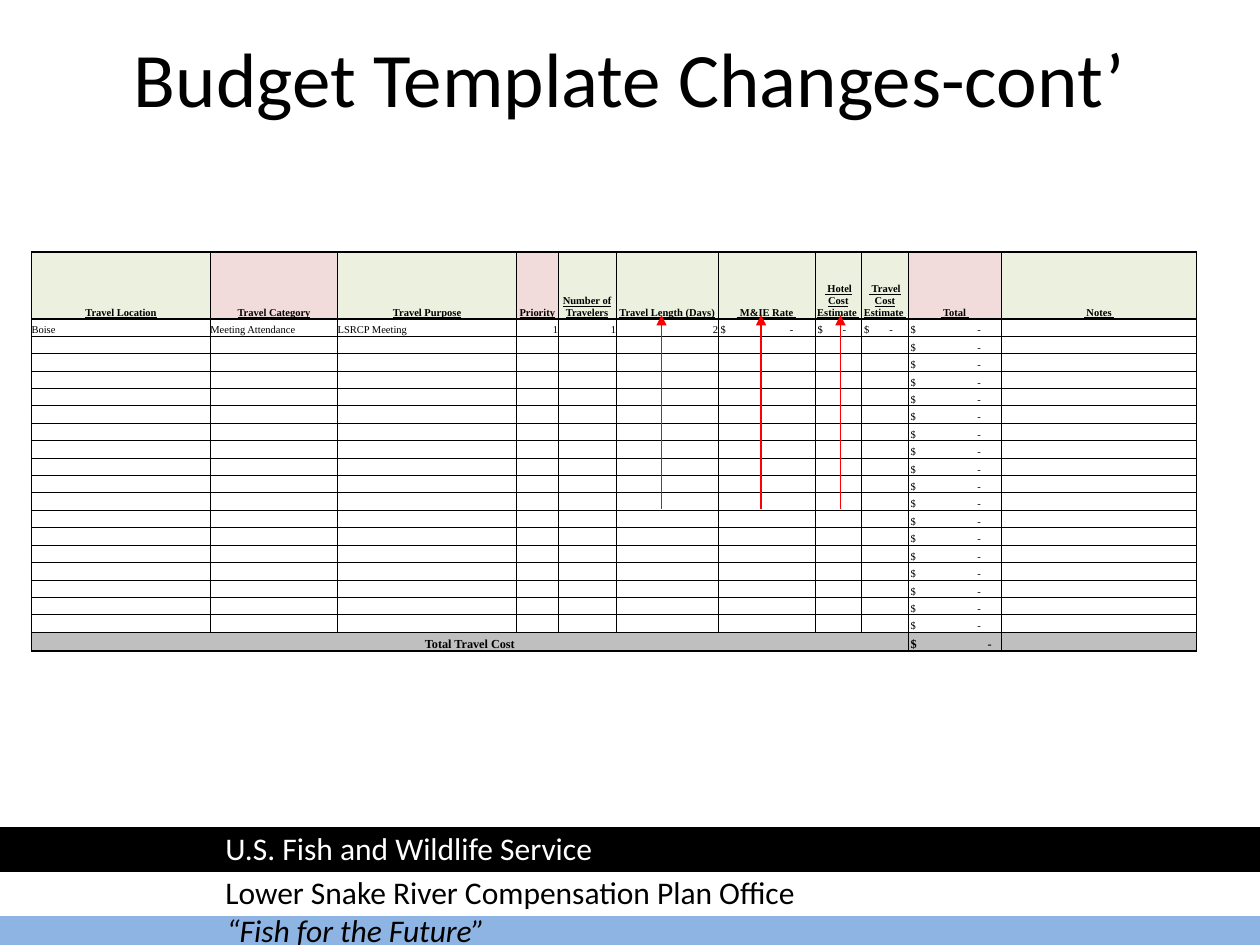
from dataclasses import dataclass

from lxml.etree import SubElement
from pptx import Presentation
from pptx.dml.color import RGBColor
from pptx.enum.shapes import MSO_CONNECTOR, MSO_SHAPE
from pptx.enum.text import MSO_ANCHOR, PP_ALIGN
from pptx.oxml.ns import qn
from pptx.util import Inches, Pt


@dataclass(frozen=True)
class Theme:
    black: str = "000000"
    white: str = "FFFFFF"
    blue: str = "8EB4E3"
    green: str = "EBF1DE"
    pink: str = "F2DCDB"
    gray: str = "BFBFBF"
    red: str = "FF0000"
    sans: str = "Calibri"
    serif: str = "Times New Roman"
    title: int = 44
    footer: int = 18
    cell: int = 6
    total: int = 7


theme = Theme()


def add_text(slide, text, box, size, color):
    tb = slide.shapes.add_textbox(*map(Inches, box))
    tf = tb.text_frame
    tf.word_wrap = True
    tf.text = text
    font = tf.paragraphs[0].runs[0].font
    font.name, font.size = theme.sans, Pt(size)
    font.color.rgb = RGBColor.from_string(color)
    return tf


def set_border(cell, side, width):
    """Draw one side (L, R, T or B) of a cell in black."""
    ln = SubElement(cell._tc.get_or_add_tcPr(), qn(f"a:ln{side}"), w=str(Pt(width)))
    fill = SubElement(ln, qn("a:solidFill"))
    SubElement(fill, qn("a:srgbClr"), val=theme.black)


prs = Presentation()
prs.slide_width, prs.slide_height = Inches(10), Inches(7.5)
s = prs.slides.add_slide(prs.slide_layouts[6])

# Footer bands and their text
for left, top, color in [(-0.01, 7.17, theme.blue), (0, 6.93, theme.white), (0, 6.58, theme.black)]:
    sp = s.shapes.add_shape(MSO_SHAPE.RECTANGLE, Inches(left), Inches(top), Inches(10), Inches(0.33))
    sp.shadow.inherit = False
    sp.fill.solid()
    sp.fill.fore_color.rgb = RGBColor.from_string(color)
    sp.line.color.rgb = RGBColor.from_string(color)
    sp.line.width = Pt(2)

motto = add_text(s, "“Fish for the Future”", (1.7, 7.18, 2.3, 0.4), theme.footer, theme.black)
motto.paragraphs[0].runs[0].font.italic = True
add_text(s, "U.S. Fish and Wildlife Service", (1.69, 6.53, 4.16, 0.4), theme.footer, theme.white)
add_text(s, "Lower Snake River Compensation Plan Office", (1.69, 6.88, 4.97, 0.4), theme.footer, theme.black)

tf = add_text(s, "Budget Template Changes-cont’", (0.5, 0.17, 9, 0.87), theme.title, theme.black)
tf.vertical_anchor = MSO_ANCHOR.MIDDLE
tf.paragraphs[0].alignment = PP_ALIGN.CENTER

# Travel budget table
columns = [
    ("Travel Location", 1.42), ("Travel Category", 1.01), ("Travel Purpose", 1.42),
    ("Priority", 0.33), ("Number of Travelers", 0.46), ("Travel Length (Days)", 0.81),
    (" M&IE Rate ", 0.77), (" Hotel Cost Estimate ", 0.37), (" Travel Cost Estimate ", 0.37),
    (" Total ", 0.74), (" Notes ", 1.55),
]
pink_columns = {1, 3, 9}
number_columns = {3, 4, 5}
dash_tabs = {6: 0.55, 7: 0.2, 8: 0.2, 9: 0.53}
TOTAL_COL, LAST_COL = 9, len(columns) - 1
BODY_ROWS = 18
LAST_ROW = BODY_ROWS + 1
HEADER_H, BODY_H, TOTAL_H = 0.53, 2.49, 0.15
MONEY = "$\t-"

blank = [""] * TOTAL_COL + [MONEY, ""]
rows = [
    [name for name, _ in columns],
    ["Boise", "Meeting Attendance", "LSRCP Meeting", "1", "1", "2", MONEY, MONEY, MONEY, MONEY, ""],
    *[blank] * (BODY_ROWS - 1),
    ["Total Travel Cost", *blank[1:]],
]

table = s.shapes.add_table(len(rows), len(columns), Inches(0.25), Inches(2), Inches(9.25), Inches(3.17)).table
table.first_row = table.horz_banding = False
for col, (_, width) in zip(table.columns, columns):
    col.width = Inches(width)
for row, height in zip(table.rows, [HEADER_H, *[BODY_H / BODY_ROWS] * BODY_ROWS, TOTAL_H]):
    row.height = Inches(height)
table.cell(LAST_ROW, 0).merge(table.cell(LAST_ROW, TOTAL_COL - 1))

for i, texts in enumerate(rows):
    is_header, is_total = i == 0, i == LAST_ROW
    for j, text in enumerate(texts):
        cell = table.cell(i, j)
        cell.margin_left = cell.margin_right = cell.margin_top = cell.margin_bottom = 0
        cell.vertical_anchor = MSO_ANCHOR.BOTTOM
        for side, thick in [("L", j == 0), ("R", j == LAST_COL), ("T", i <= 1), ("B", is_header or is_total)]:
            set_border(cell, side, 1 if thick else 0.5)

        if is_header:
            color = theme.pink if j in pink_columns else theme.green
        else:
            color = theme.gray if is_total else theme.white
        cell.fill.solid()
        cell.fill.fore_color.rgb = RGBColor.from_string(color)

        size = theme.total if is_total else theme.cell
        p = cell.text_frame.paragraphs[0]
        if not text:
            SubElement(p._p, qn("a:endParaRPr"), sz=str(size * 100))
            continue
        if text == MONEY:
            cell.margin_left = Inches(0.02)
            tab = 0.61 if is_total else dash_tabs[j]
            tabs = SubElement(p._p.get_or_add_pPr(), qn("a:tabLst"))
            SubElement(tabs, qn("a:tab"), pos=str(Inches(tab)), algn="l")
        elif is_header or is_total:
            p.alignment = PP_ALIGN.CENTER
        elif j in number_columns:
            p.alignment = PP_ALIGN.RIGHT
        r = p.add_run()
        r.text = text
        r.font.name, r.font.size = theme.serif, Pt(size)
        r.font.bold, r.font.underline = is_header or is_total, is_header
        r.font.color.rgb = RGBColor.from_string(theme.black)

# Arrows up to the changed columns
for x in (5.25, 6.04, 6.67):
    arrow = s.shapes.add_connector(MSO_CONNECTOR.STRAIGHT, Inches(x), Inches(4.04), Inches(x), Inches(2.5))
    arrow.line.color.rgb = RGBColor.from_string(theme.red)
    arrow.line.width = Pt(0.75)
    SubElement(arrow.line._get_or_add_ln(), qn("a:tailEnd"), type="triangle")
    SubElement(arrow._element.spPr, qn("a:effectLst"))

prs.save("out.pptx")
